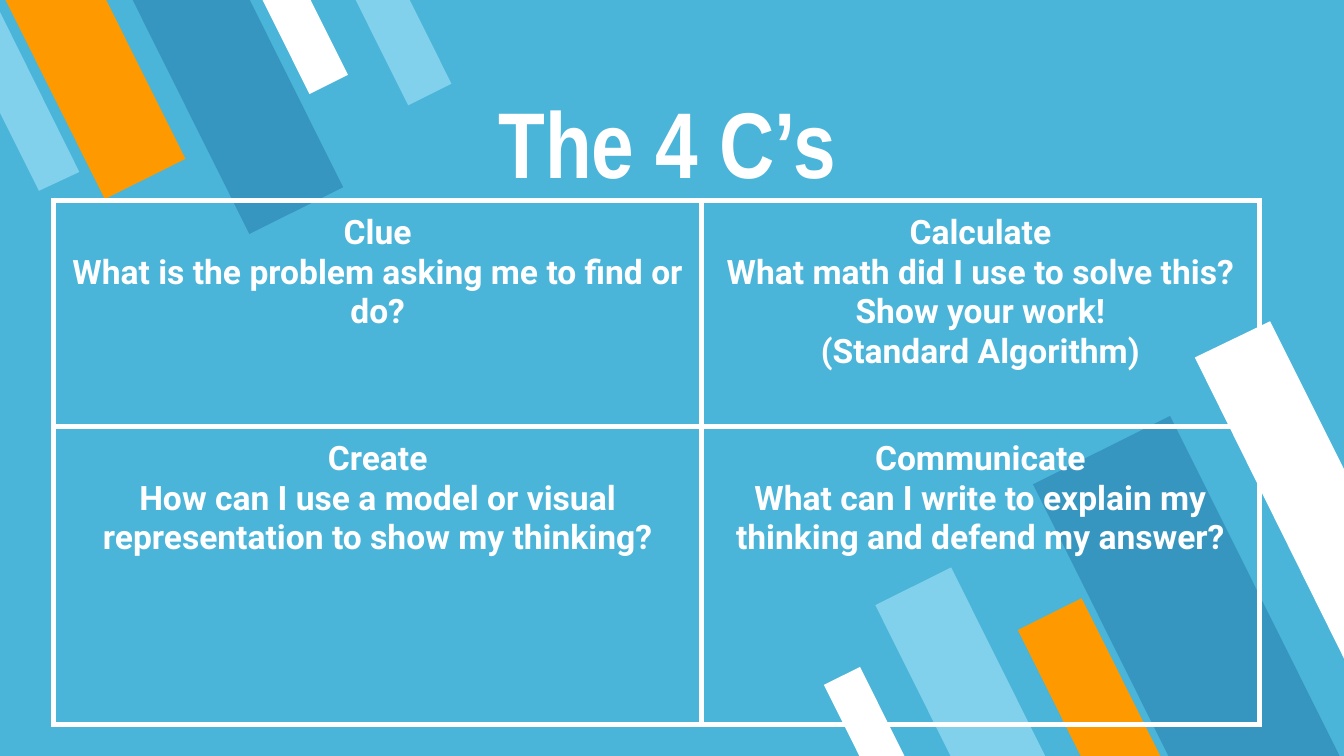
from lxml import etree
from pptx import Presentation
from pptx import util as u
from pptx.dml.color import RGBColor
from pptx.enum import shapes, text
from pptx.oxml import ns

BLUE, PALE, DEEP = "4BB5D9", "81D1EC", "3796BF"
GOLD, WHITE = "FF9900", "FFFFFF"


def color(value):
    return RGBColor.from_string(value)


class Deck:
    def __init__(self):
        self.file = Presentation()
        self.file.slide_width = u.Inches(10)
        self.file.slide_height = u.Inches(10 * 9 / 16)
        self.slide = self.file.slides.add_slide(self.file.slide_layouts[5])
        fill = self.slide.background.fill
        fill.solid()
        fill.fore_color.rgb = color(BLUE)

    def paint(self, shape, fill):
        shape.shadow.inherit = False
        shape.fill.solid()
        shape.fill.fore_color.rgb = color(fill)
        shape.line.fill.background()

    def bar(self, box, turn, fill):
        shape = self.slide.shapes.add_shape(
            shapes.MSO_SHAPE.FLOWCHART_MANUAL_INPUT, *map(u.Inches, box))
        shape.rotation = turn
        shape.element.spPr.xfrm.set("flipH", "1")
        self.paint(shape, fill)

    def outline(self, points, fill):
        first, *rest = [(u.Inches(x), u.Inches(y)) for x, y in points]
        build = self.slide.shapes.build_freeform(*first)
        build.add_line_segments(rest, close=True)
        self.paint(build.convert_to_shape(), fill)

    def font(self, para, name, size):
        para.font.name = name
        para.font.size = u.Pt(size)
        para.font.bold = True
        para.font.color.rgb = color(WHITE)

    def title(self, words, box):
        shape = self.slide.shapes.title
        shape.left, shape.top, shape.width, shape.height = map(u.Inches, box)
        frame = shape.text_frame
        frame.text = words
        frame.word_wrap = True
        frame.auto_size = text.MSO_AUTO_SIZE.NONE
        frame.vertical_anchor = text.MSO_ANCHOR.BOTTOM
        frame.margin_left = frame.margin_right = u.Inches(0.1)
        frame.margin_top = frame.margin_bottom = u.Inches(0.1)
        para = frame.paragraphs[0]
        para.alignment = text.PP_ALIGN.LEFT
        self.font(para, "Arial Narrow", 50)

    def border(self, cell, width):
        props = cell._tc.get_or_add_tcPr()
        for side in ("lnL", "lnR", "lnT", "lnB"):
            line = etree.SubElement(props, ns.qn("a:" + side), w=str(u.Pt(width)))
            fill = etree.SubElement(line, ns.qn("a:solidFill"))
            etree.SubElement(fill, ns.qn("a:srgbClr"), val=WHITE)

    def cell(self, cell, lines):
        cell.margin_left = cell.margin_right = u.Inches(0.1)
        cell.margin_top = cell.margin_bottom = u.Inches(0.1)
        self.border(cell, 3)
        cell.fill.background()
        cell.text = "\n".join(lines)
        for para in cell.text_frame.paragraphs:
            para.alignment = text.PP_ALIGN.CENTER
            self.font(para, "Roboto", 18)

    def table(self, left, top, widths, heights, rows):
        size = left, top, sum(widths), sum(heights)
        grid = self.slide.shapes.add_table(
            len(heights), len(widths), *map(u.Inches, size)).table
        grid.first_row = grid.horz_banding = False
        for col, width in zip(grid.columns, widths):
            col.width = u.Inches(width)
        for row, height, items in zip(grid.rows, heights, rows):
            row.height = u.Inches(height)
            for cell, lines in zip(row.cells, items):
                self.cell(cell, lines)


def main():
    deck = Deck()

    # Slanted bars, lower right
    for box, fill in [
        ((6.83, 4.28, 0.63, 1.57), PALE),
        ((8.26, 3.2, 1.14, 2.84), DEEP),
        ((7.84, 4.5, 0.53, 1.32), GOLD),
        ((6.28, 4.99, 0.3, 0.74), WHITE),
    ]:
        deck.bar(box, 153.5, fill)
    deck.outline([(9.45, 2.39), (8.89, 2.66), (10, 4.9), (10, 3.49)], WHITE)

    # Slanted bars, upper left
    for box, fill in [
        ((2.11, -0.12, 0.32, 0.79), WHITE),
        ((0.37, -0.26, 0.67, 1.68), GOLD),
        ((1.38, -0.28, 0.78, 1.95), DEEP),
        ((2.82, -0.14, 0.36, 0.89), PALE),
    ]:
        deck.bar(box, 333.5, fill)
    deck.outline([(0.29, 1.42), (0.59, 1.28), (0, 0.09), (0, 0.84)], PALE)

    # Title and the four questions
    deck.title("The 4 C’s", (3.61, 0.3, 6.2, 1.27))
    deck.table(0.4, 1.49, (4.82, 4.15), (1.68, 2.22), [
        [
            ("Clue", "What is the problem asking me to find or do?"),
            ("Calculate",
             "What math did I use to solve this? Show your work!",
             "(Standard Algorithm)"),
        ],
        [
            ("Create",
             "How can I use a model or visual representation to show my thinking?"),
            ("Communicate",
             "What can I write to explain my thinking and defend my answer?"),
        ],
    ])
    deck.file.save("out.pptx")


if __name__ == "__main__":
    main()
